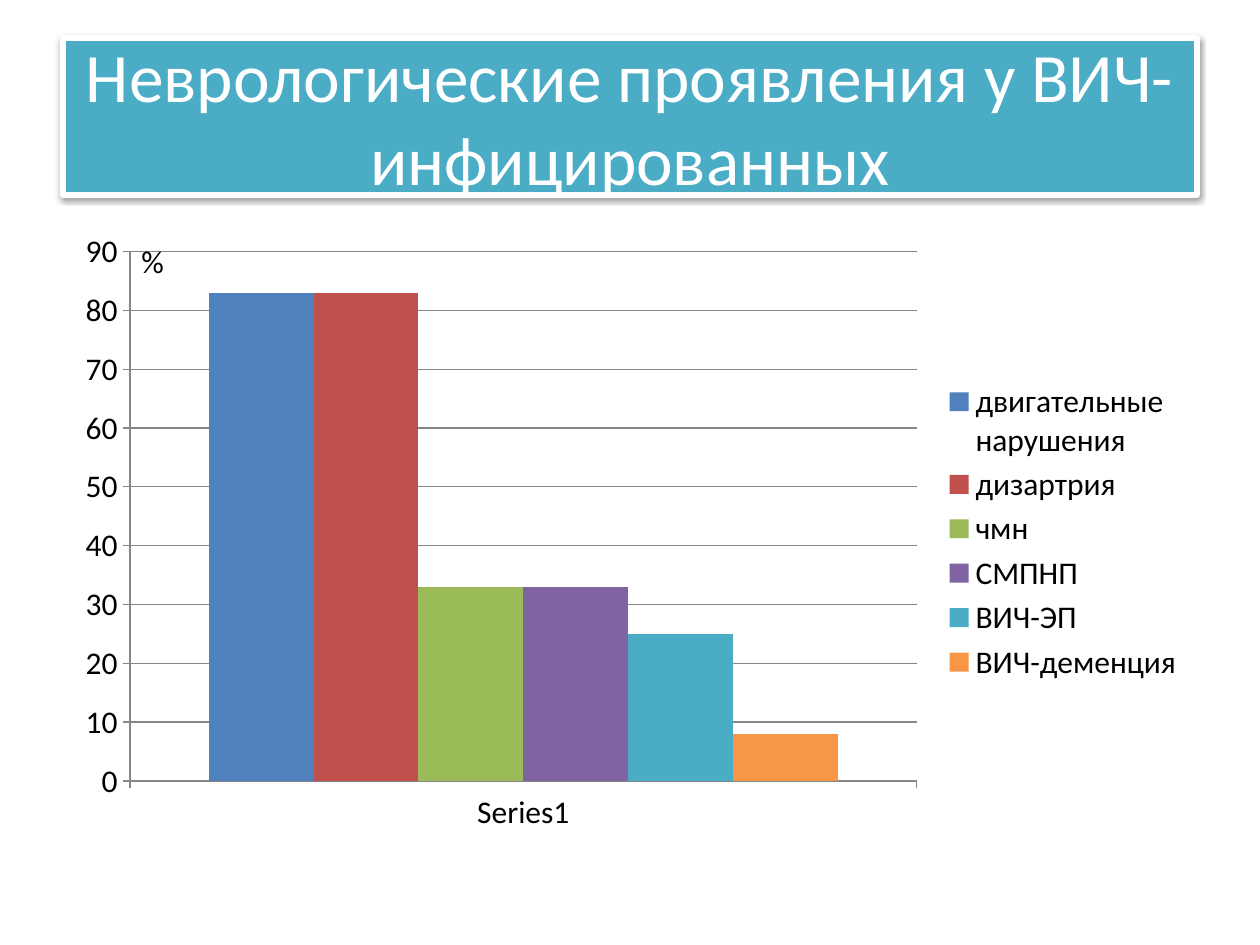
from dataclasses import dataclass

from lxml import etree
from pptx import Presentation
from pptx.chart.data import CategoryChartData
from pptx.dml.color import RGBColor
from pptx.enum.chart import XL_CHART_TYPE as ChartType
from pptx.enum.chart import XL_LEGEND_POSITION as LegendPlace
from pptx.enum.chart import XL_TICK_MARK as TickMark
from pptx.enum.shapes import MSO_SHAPE as Preset
from pptx.enum.text import MSO_ANCHOR as Anchor
from pptx.enum.text import MSO_AUTO_SIZE as AutoSize
from pptx.enum.text import PP_ALIGN as Align
from pptx.oxml import parse_xml
from pptx.util import Emu, Pt

PX_PER_INCH = 126
DRAWING_NS = "http://schemas.openxmlformats.org/drawingml/2006/main"


@dataclass(frozen=True)
class Theme:
    font: str = "Calibri"
    white: str = "FFFFFF"
    black: str = "000000"
    axis: str = "868686"
    banner: str = "4BACC6"
    bars: tuple = ("4F81BD", "C0504D", "9BBB59", "8064A2", "4BACC6", "F79646")
    title_size: float = 39.6
    body_size: float = 18


def px(length):
    return Emu(round(length * 914400 / PX_PER_INCH))


def color(code):
    return RGBColor.from_string(code)


def style_font(font, name, size, ink):
    font.name = name
    font.size = Pt(size)
    font.color.rgb = color(ink)


def write_text(frame, text, *, font, size, ink, align=Align.LEFT,
               anchor=Anchor.TOP, wrap=True, grow=False):
    frame.word_wrap = wrap
    frame.vertical_anchor = anchor
    frame.auto_size = AutoSize.SHAPE_TO_FIT_TEXT if grow else AutoSize.NONE
    para = frame.paragraphs[0]
    para.alignment = align
    span = para.add_run()
    span.text = text
    style_font(span.font, font, size, ink)


class SlideBuilder:
    def __init__(self, page, theme):
        self.page = page
        self.theme = theme

    def banner(self, text, left, top, width, height):
        theme = self.theme
        box = self.page.shapes.add_shape(
            Preset.RECTANGLE, px(left), px(top), px(width), px(height))
        box.fill.solid()
        box.fill.fore_color.rgb = color(theme.banner)
        box.line.color.rgb = color(theme.white)
        box.line.width = Pt(3)
        self.drop_shadow(box)
        write_text(box.text_frame, text, font=theme.font, size=theme.title_size,
                   ink=theme.white, align=Align.CENTER, anchor=Anchor.MIDDLE)

    def drop_shadow(self, box):
        box.shadow.inherit = False
        effects = box._element.spPr.find(f"{{{DRAWING_NS}}}effectLst")
        effects.append(parse_xml(
            f'<a:outerShdw xmlns:a="{DRAWING_NS}" blurRad="40000" dist="20000" '
            f'dir="5400000" rotWithShape="0"><a:srgbClr val="{self.theme.black}">'
            '<a:alpha val="38000"/></a:srgbClr></a:outerShdw>'))

    def label(self, text, left, top, width, height):
        theme = self.theme
        box = self.page.shapes.add_textbox(px(left), px(top), px(width), px(height))
        write_text(box.text_frame, text, font=theme.font, size=theme.body_size,
                   ink=theme.black, wrap=False, grow=True)

    def column_chart(self, category, values, left, top, width, height):
        theme = self.theme
        data = CategoryChartData()
        data.categories = [category]
        for name, value in values.items():
            data.add_series(name, [value])
        chart = self.page.shapes.add_chart(
            ChartType.COLUMN_CLUSTERED, px(left), px(top), px(width), px(height),
            data).chart
        chart.has_title = False
        style_font(chart.font, theme.font, theme.body_size, theme.black)

        # Columns
        plot = chart.plots[0]
        plot.vary_by_categories = False
        plot.gap_width = 150
        plot.overlap = 0
        for series, code in zip(plot.series, theme.bars):
            series.format.fill.solid()
            series.format.fill.fore_color.rgb = color(code)
            series.invert_if_negative = False

        # Axes and gridlines
        scale = chart.value_axis
        scale.minimum_scale, scale.maximum_scale, scale.major_unit = 0, 90, 10
        scale.has_major_gridlines = True
        for part in (scale, chart.category_axis, scale.major_gridlines):
            part.format.line.color.rgb = color(theme.axis)
            part.format.line.width = Pt(0.75)
        for axis in (scale, chart.category_axis):
            axis.major_tick_mark = TickMark.OUTSIDE
            axis.minor_tick_mark = TickMark.NONE

        # Legend
        chart.has_legend = True
        chart.legend.position = LegendPlace.RIGHT
        chart.legend.include_in_layout = False


def main():
    deck = Presentation()
    deck.slide_width, deck.slide_height = px(1260), px(945)
    page = deck.slides.add_slide(deck.slide_layouts[6])
    builder = SlideBuilder(page, Theme())

    # Title
    builder.banner("Неврологические проявления у ВИЧ-инфицированных",
                   63, 38, 1134, 157)

    # Share of patients with each manifestation
    shares = {
        "двигательные нарушения": 83,
        "дизартрия": 83,
        "чмн": 33,
        "СМПНП": 33,
        "ВИЧ-ЭП": 25,
        "ВИЧ-деменция": 8,
    }
    builder.column_chart("Series1", shares, 63, 220, 1134, 624)

    # Unit of the value axis
    builder.label("%", 129, 236, 55, 50)

    deck.save("out.pptx")


if __name__ == "__main__":
    main()
